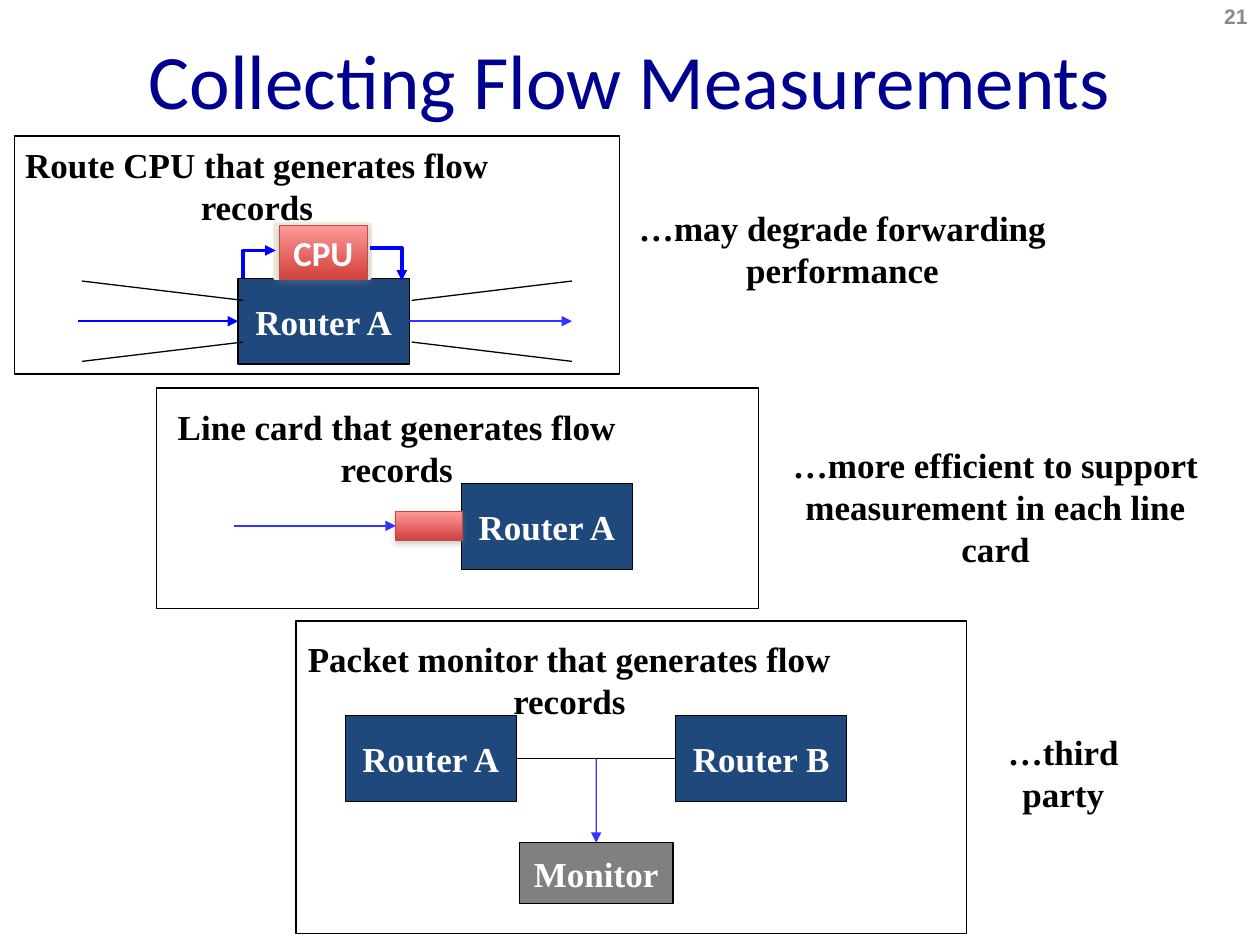
from lxml import etree
from pptx import Presentation
from pptx.dml.color import RGBColor
from pptx.enum.shapes import MSO_CONNECTOR as Link, MSO_SHAPE as Preset
from pptx.enum.text import MSO_ANCHOR as Anchor, PP_ALIGN as Align
from pptx.oxml.ns import qn
from pptx.util import Cm, Pt

SERIF = "Times New Roman"
BLACK, WHITE, NAVY, GRAY = "000000", "FFFFFF", "1F497D", "808080"
BLUE, SOFT_BLUE = "0000FF", "3333FF"
ROUTER_W, ROUTER_H = 3.45, 1.73


def rgb(value):
    return RGBColor.from_string(value)


def set_line(line, color, width, arrow=False):
    line.color.rgb = rgb(color)
    line.width = Pt(width)
    if arrow:
        ends = line.fill._xPr
        etree.SubElement(ends, qn("a:tailEnd"), type="triangle")


def write(shape, lines, size=20, color=BLACK, font=SERIF, bold=True,
          align=Align.CENTER, anchor=Anchor.MIDDLE, wrap=True, side=0):
    frame = shape.text_frame
    frame.word_wrap = wrap
    frame.vertical_anchor = anchor
    frame.margin_left = frame.margin_right = Cm(side)
    for index, words in enumerate(lines):
        para = frame.add_paragraph() if index else frame.paragraphs[0]
        para.text = words
        para.alignment = align
        para.font.name, para.font.size, para.font.bold = font, Pt(size), bold
        para.font.color.rgb = rgb(color)


def add_text(page, x, y, width, height, *lines, **style):
    box = page.shapes.add_textbox(Cm(x), Cm(y), Cm(width), Cm(height))
    write(box, lines, **style)


def add_note(page, x, y, width, *lines):
    add_text(page, x, y, width, 1.09, *lines, anchor=Anchor.TOP)


def add_box(page, x, y, width, height, fill=None, line=BLACK, weight=0.75):
    box = page.shapes.add_shape(Preset.RECTANGLE, Cm(x), Cm(y), Cm(width), Cm(height))
    box.shadow.inherit = False
    if fill:
        box.fill.solid()
        box.fill.fore_color.rgb = rgb(fill)
    else:
        box.fill.background()
    set_line(box.line, line, weight)
    return box


def add_labelled(page, x, y, width, height, label, fill):
    box = add_box(page, x, y, width, height, fill)
    write(box, [label], color=WHITE, wrap=False)
    return box


def add_router(page, x, y, label):
    return add_labelled(page, x, y, ROUTER_W, ROUTER_H, label, NAVY)


def add_red_box(page, x, y, width, height):
    """Red gradient box with a soft shadow below it."""
    box = add_box(page, x, y, width, height, line="BE4B48")
    box.fill.gradient()
    box.fill.gradient_angle = 270
    for stop, color in zip(box.fill.gradient_stops, ("FF9A99", "D1403C")):
        stop.color.rgb = rgb(color)
    effects = box._element.spPr.find(qn("a:effectLst"))
    shadow = etree.SubElement(effects, qn("a:outerShdw"), blurRad=str(Pt(3.1)),
                              dist=str(Pt(1.8)), dir="5400000", rotWithShape="0")
    tone = etree.SubElement(shadow, qn("a:srgbClr"), val=GRAY)
    etree.SubElement(tone, qn("a:alpha"), val="35000")
    return box


def add_line(page, x1, y1, x2, y2, color=BLACK, weight=0.75, arrow=False,
             begin=None, end=None):
    """Straight line; begin and end are (shape, side) pairs to join."""
    line = page.shapes.add_connector(Link.STRAIGHT, Cm(x1), Cm(y1), Cm(x2), Cm(y2))
    if begin:
        line.begin_connect(*begin)
    if end:
        line.end_connect(*end)
    set_line(line.line, color, weight, arrow)
    etree.SubElement(line._element.spPr, qn("a:effectLst"))


def add_elbow(page, *points):
    start, *rest = [(Cm(x), Cm(y)) for x, y in points]
    builder = page.shapes.build_freeform(*start)
    builder.add_line_segments(rest, close=False)
    elbow = builder.convert_to_shape()
    elbow.shadow.inherit = False
    elbow.fill.background()
    set_line(elbow.line, BLUE, 2, arrow=True)


def add_cpu_panel(page, x, y, width, height):
    add_box(page, x, y, width, height)
    add_note(page, x - 0.05, y + 0.03, 9.86, "Route CPU that generates flow records")
    add_note(page, x + 12.34, y + 1.3, 8.69, "…may degrade forwarding performance")
    router = add_router(page, x + 4.5, y + 2.87, "Router A")
    # Traffic through the router, between lines that fan outwards
    middle = y + 2.87 + ROUTER_H / 2
    add_line(page, x + 1.27, middle, x + 4.5, middle, BLUE, 1.25, True, end=(router, 1))
    add_line(page, x + 8, middle, x + 11.23, middle, SOFT_BLUE, 1.25, True,
             begin=(router, 3))
    for inner, outer in ((4.6, 1.35), (8, 11.23)):
        for sign in (-1, 1):
            add_line(page, x + inner, middle + sign * 0.42,
                     x + outer, middle + sign * 0.81)
    # CPU with its detour
    add_box(page, x + 5.26, y + 1.78, 1.88, 1.07, "EEECE1", "EEECE1", 3)
    cpu = add_red_box(page, x + 5.33, y + 1.8, 1.78, 1.09)
    write(cpu, ["CPU"], color=WHITE, font="Calibri", wrap=False)
    add_elbow(page, (x + 4.6, y + 2.87), (x + 4.6, y + 2.31), (x + 5.26, y + 2.31))
    add_elbow(page, (x + 7.16, y + 2.26), (x + 7.8, y + 2.26), (x + 7.8, y + 2.92))


def add_line_card_panel(page, x, y, width, height):
    add_box(page, x, y, width, height)
    add_note(page, x + 0.2, y + 0.23, 9.3, "Line card that generates flow records")
    add_note(page, x + 12.5, y + 0.99, 8.84,
             "…more efficient to support", "measurement in each line card")
    add_router(page, x + 6.15, y + 1.93, "Router A")
    card = add_red_box(page, x + 4.83, y + 2.49, 1.35, 0.58)
    add_line(page, x + 1.57, y + 2.78, x + 4.83, y + 2.78, SOFT_BLUE, 1.25, True,
             end=(card, 1))


def add_monitor_panel(page, x, y, width, height):
    add_box(page, x, y, width, height)
    add_note(page, x, y + 0.2, 11.02, "Packet monitor that generates flow records")
    add_note(page, x + 14.12, y + 2.08, 2.69, "…third party")
    first = add_router(page, x + 0.99, y + 1.91, "Router A")
    second = add_router(page, x + 7.65, y + 1.91, "Router B")
    monitor = add_labelled(page, x + 4.5, y + 4.47, 3.1, 1.22, "Monitor", GRAY)
    # Tapped link
    middle = y + 1.91 + ROUTER_H / 2
    add_line(page, x + 4.44, middle, x + 7.65, middle, begin=(first, 3), end=(second, 1))
    add_line(page, x + 6.05, middle, x + 6.05, y + 4.47, SOFT_BLUE, 0.75, True,
             end=(monitor, 0))


def main():
    deck = Presentation()
    deck.slide_width, deck.slide_height = Cm(25.4), Cm(19.05)
    page = deck.slides.add_slide(deck.slide_layouts[6])
    # Title and page number
    add_text(page, 1.27, 0, 22.86, 3.18, "Collecting Flow Measurements",
             size=44, color="000090", font="Calibri", bold=False)
    add_text(page, 19.48, -0.18, 5.92, 1.02, "21", size=12, color="898989",
             font="Arial", align=Align.RIGHT, side=0.25)
    # Three ways to measure
    add_cpu_panel(page, 0.3, 2.74, 12.19, 4.8)
    add_line_card_panel(page, 3.15, 7.82, 12.14, 4.45)
    add_monitor_panel(page, 5.97, 12.52, 13.51, 6.3)
    deck.save("out.pptx")


if __name__ == "__main__":
    main()
